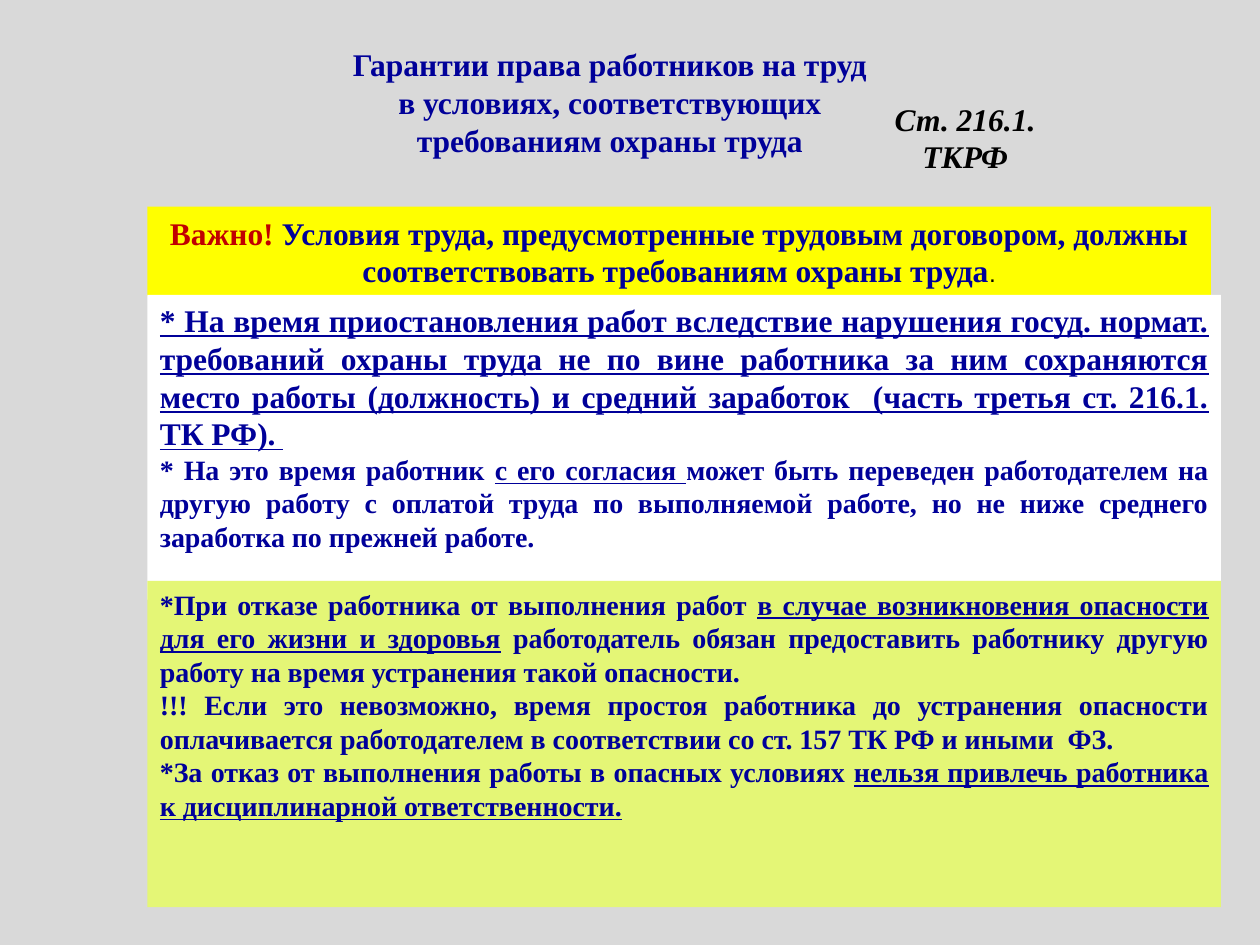
import pptx
import pptx.dml.color
import pptx.enum.shapes
import pptx.enum.text
import pptx.util

Inches = pptx.util.Inches
RGBColor = pptx.dml.color.RGBColor
Align = pptx.enum.text.PP_ALIGN
Anchor = pptx.enum.text.MSO_ANCHOR

GREY = RGBColor(0xD9, 0xD9, 0xD9)
NAVY = RGBColor(0x00, 0x00, 0x99)
BLACK = RGBColor(0x00, 0x00, 0x00)
RED = RGBColor(0xC0, 0x00, 0x00)
YELLOW = RGBColor(0xFF, 0xFF, 0x00)
WHITE = RGBColor(0xFF, 0xFF, 0xFF)
LIME = RGBColor(0xE4, 0xF6, 0x76)

BODY = {"name": "Times New Roman", "size": 16, "bold": True, "color": NAVY}
LARGE = {**BODY, "size": 18}
UNDERLINED = {**BODY, "underline": True}
LARGE_UNDERLINED = {**LARGE, "underline": True}
WARNING = {**LARGE, "color": RED}
ARTICLE = {**LARGE, "color": BLACK, "italic": True}
FULL_STOP = {"name": "Arial", "size": 14, "bold": False, "color": BLACK}

PANEL_LEFT = 1.17


def format_font(font, style):
    for key, value in style.items():
        if key == "color":
            font.color.rgb = value
        elif key == "size":
            font.size = pptx.util.Pt(value)
        else:
            setattr(font, key, value)


def write_text(shape, paragraphs, align, anchor=Anchor.TOP):
    """Fill a shape with paragraphs, each a list of (text, style) spans."""
    frame = shape.text_frame
    frame.word_wrap = True
    frame.auto_size = pptx.enum.text.MSO_AUTO_SIZE.NONE
    frame.vertical_anchor = anchor
    for index, spans in enumerate(paragraphs):
        para = frame.add_paragraph() if index else frame.paragraphs[0]
        para.alignment = align
        for text, style in spans:
            span = para.add_run()
            span.text = text
            format_font(span.font, style)


def add_title(slide, paragraphs):
    title = slide.shapes.title
    title.left, title.top = Inches(2.5), Inches(0.31)
    title.width, title.height = Inches(4.68), Inches(1.62)
    write_text(title, paragraphs, Align.CENTER)


def add_article_reference(slide, text):
    box = slide.shapes.add_textbox(Inches(6.72), Inches(0.47),
                                   Inches(1.88), Inches(0.98))
    box.text_frame.margin_top = Inches(0.32)
    write_text(box, [[(text, ARTICLE)]], Align.CENTER)


def add_panel(slide, top, width, height, fill, paragraphs,
              align=Align.JUSTIFY, anchor=Anchor.TOP):
    panel = slide.shapes.add_shape(
        pptx.enum.shapes.MSO_SHAPE.RECTANGLE, Inches(PANEL_LEFT), Inches(top),
        Inches(width), Inches(height))
    panel.shadow.inherit = False
    panel.fill.solid()
    panel.fill.fore_color.rgb = fill
    panel.line.fill.background()
    write_text(panel, paragraphs, align, anchor)


def main():
    deck = pptx.Presentation()
    deck.slide_width, deck.slide_height = Inches(10), Inches(7.5)
    slide = deck.slides.add_slide(deck.slide_layouts.get_by_name("Title Only"))
    slide.background.fill.solid()
    slide.background.fill.fore_color.rgb = GREY

    add_title(slide, [
        [("Гарантии права работников на труд", LARGE)],
        [("в условиях, соответствующих требованиям охраны труда", LARGE)],
    ])
    add_article_reference(slide, "Ст. 216.1. ТКРФ")
    add_panel(slide, 1.64, 8.44, 0.71, YELLOW, [[
        ("Важно! ", WARNING),
        ("Условия труда, предусмотренные трудовым договором, должны "
         "соответствовать требованиям охраны труда", LARGE),
        (".", FULL_STOP),
    ]], Align.CENTER, Anchor.MIDDLE)
    add_panel(slide, 2.34, 8.52, 2.42, WHITE, [
        [("* На время приостановления работ вследствие нарушения госуд. "
          "нормат. требований охраны труда не по вине работника за ним "
          "сохраняются место работы (должность) и средний заработок  "
          "(часть третья ст. 216.1. ТК РФ). ", LARGE_UNDERLINED)],
        [("* На это время работник ", BODY),
         ("с его согласия ", UNDERLINED),
         ("может быть переведен работодателем на другую работу с оплатой "
          "труда по выполняемой работе, но не ниже среднего заработка по "
          "прежней работе.", BODY)],
    ])
    add_panel(slide, 4.61, 8.52, 2.59, LIME, [
        [("*При отказе работника от выполнения работ ", BODY),
         ("в случае возникновения опасности для его жизни и здоровья",
          UNDERLINED),
         (" работодатель обязан предоставить работнику другую работу на "
          "время устранения такой опасности.", BODY)],
        [("!!! Если это невозможно, время простоя работника до устранения "
          "опасности оплачивается работодателем в соответствии со ст. 157 "
          "ТК РФ и иными  ФЗ.", BODY)],
        [("*За отказ от выполнения работы в опасных условиях ", BODY),
         ("нельзя привлечь работника к дисциплинарной ответственности.",
          UNDERLINED)],
    ])
    deck.save("out.pptx")


if __name__ == "__main__":
    main()
